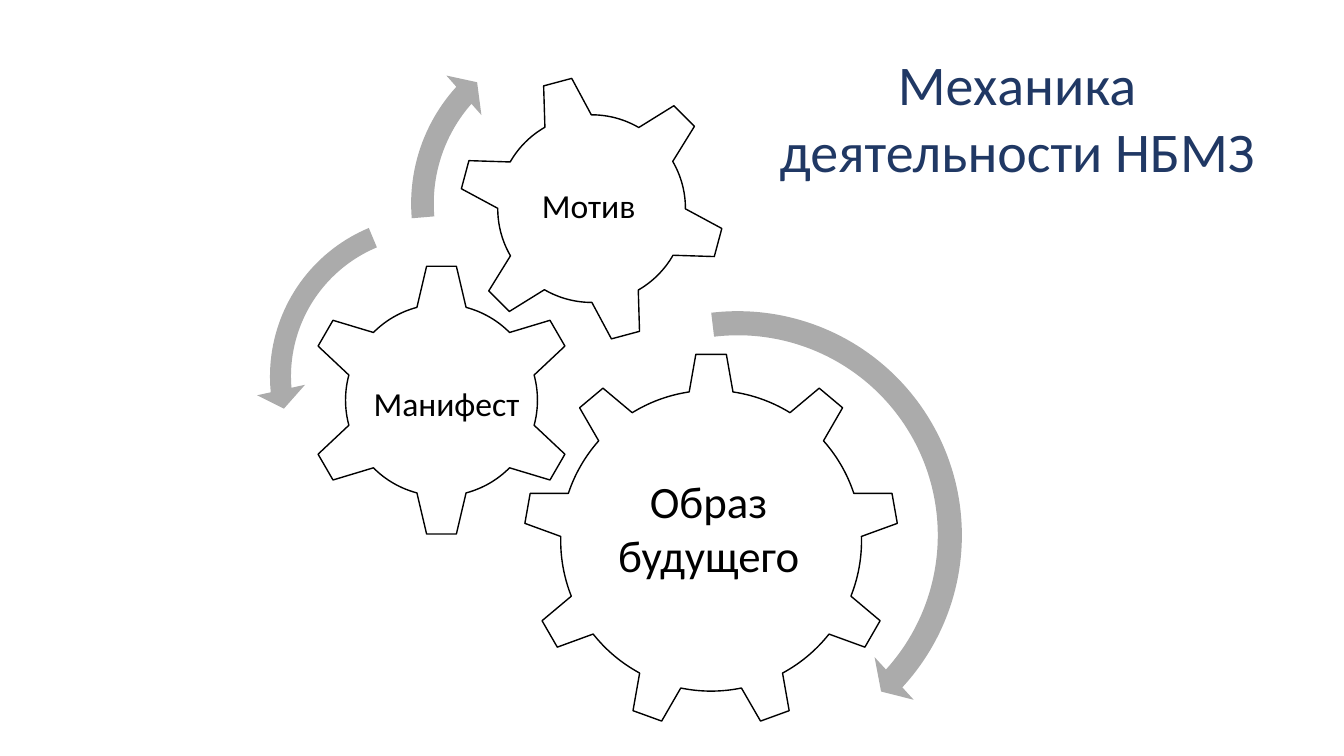
import pptx
import pptx.dml.color
import pptx.enum.shapes
import pptx.enum.text
import pptx.util

NAVY = pptx.dml.color.RGBColor(0x20, 0x38, 0x64)
BLACK = pptx.dml.color.RGBColor(0x00, 0x00, 0x00)
WHITE = pptx.dml.color.RGBColor(0xFF, 0xFF, 0xFF)
GREY = pptx.dml.color.RGBColor(0xAB, 0xAB, 0xAB)
PRESET = pptx.enum.shapes.MSO_SHAPE
COLUMNS, ROWS = 80, 45
CELL = pptx.util.Inches(7.5) // ROWS


def write(frame, text, size=24, color=BLACK, font="Calibri", wrap=False):
    frame.text = text
    frame.word_wrap = wrap
    frame.auto_size = pptx.enum.text.MSO_AUTO_SIZE.SHAPE_TO_FIT_TEXT
    frame.vertical_anchor = pptx.enum.text.MSO_ANCHOR.TOP
    for paragraph in frame.paragraphs:
        paragraph.alignment = pptx.enum.text.PP_ALIGN.CENTER
        paragraph.line_spacing = 1.0
        for run in paragraph.runs:
            run.font.name = font
            run.font.size = pptx.util.Pt(size)
            run.font.color.rgb = color


class GearSlide:
    def __init__(self, presentation):
        self.slide = presentation.slides.add_slide(presentation.slide_layouts[5])
        self.mechanism = self.slide.shapes.add_group_shape()

    def cells(self, *lengths):
        return [round(length * CELL) for length in lengths]

    def title(self, text, column, row, width, height):
        heading = self.slide.shapes.title
        heading.left, heading.top, heading.width, heading.height = self.cells(
            column, row, width, height)
        write(heading.text_frame, text, size=40, color=NAVY, wrap=True)

    def add_piece(self, preset, column, row, size, fill):
        piece = self.mechanism.shapes.add_shape(
            preset, *self.cells(column, row, size, size))
        piece.shadow.inherit = False
        piece.fill.solid()
        piece.fill.fore_color.rgb = fill
        return piece

    def gear(self, preset, column, row, size, rotation=0):
        gear = self.add_piece(preset, column, row, size, WHITE)
        gear.rotation = rotation
        gear.line.color.rgb = BLACK
        gear.line.width = pptx.util.Pt(1)

    def turn(self, preset, column, row, size, adjustments):
        turn = self.add_piece(preset, column, row, size, GREY)
        turn.line.fill.background()
        for index, value in enumerate(adjustments):
            turn.adjustments[index] = value

    def label(self, text, column, row, width, height, size=24):
        label = self.slide.shapes.add_textbox(
            *self.cells(column, row, width, height))
        write(label.text_frame, text, size=size)


def main():
    presentation = pptx.Presentation()
    presentation.slide_width = COLUMNS * CELL
    presentation.slide_height = ROWS * CELL
    page = GearSlide(presentation)
    page.title("Механика деятельности НБМЗ", 45.72, 2.64, 29.64, 8.7)

    page.gear(PRESET.GEAR_9, 31.14, 21, 22.38)
    page.gear(PRESET.GEAR_6, 18.12, 15.66, 16.32)
    page.gear(PRESET.GEAR_6, 27.24, 4.44, 15.96, rotation=345)

    page.turn(PRESET.CIRCULAR_ARROW, 29.58, 17.52, 28.68,
              (0.05, 2.99, 25.5, 157.91, 0.06))
    page.turn(PRESET.LEFT_CIRCULAR_ARROW, 15.24, 12, 20.82,
              (0.06, 4.3, 104.89, 148.38, 0.07))
    page.turn(PRESET.CIRCULAR_ARROW, 23.58, 0.9, 22.44,
              (0.06, 3.94, 133.14, 105.08, 0.07))

    page.label("Образ\nбудущего", 36.12, 27.9, 12.12, 7.08, size=32)
    page.label("Манифест", 21.6, 22.5, 9.96, 3)
    page.label("Мотив", 31.62, 10.74, 6.84, 3)
    presentation.save("out.pptx")


if __name__ == "__main__":
    main()
